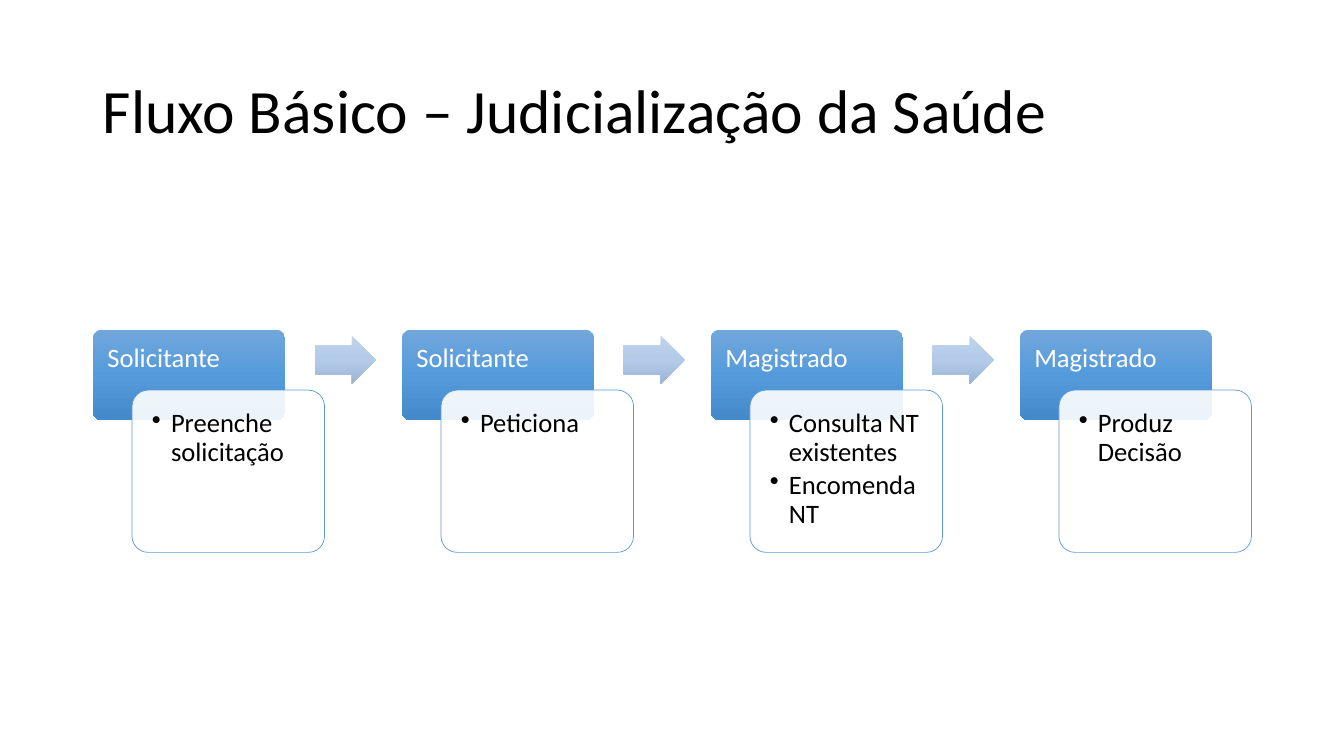
from copy import deepcopy

from lxml.etree import SubElement
from pptx import Presentation
from pptx.dml.color import RGBColor
from pptx.enum.shapes import MSO_SHAPE
from pptx.enum.text import MSO_ANCHOR, PP_ALIGN
from pptx.oxml.ns import qn
from pptx.util import Inches, Pt

COLORS = {"black": "000000", "white": "FFFFFF", "border": "5B9BD5"}
HEADER_GRADIENT = ["71A6DB", "559BDB", "448ACA"]
ARROW_GRADIENT = ["C0D2EB", "B3CBE9", "9BB4D3"]

STEPS = [
    ("Solicitante", ["Preenche solicitação"]),
    ("Solicitante", ["Peticiona"]),
    ("Magistrado", ["Consulta NT existentes", "Encomenda NT"]),
    ("Magistrado", ["Produz Decisão"]),
]
LEFT, TOP, PITCH = 0.92, 3.27, 3.065
CARD_WIDTH, HEADER_HEIGHT, BODY_HEIGHT = 1.91, 0.9, 1.61
BODY_SHIFT_X, BODY_SHIFT_Y = 0.39, 0.6
ARROW_SHIFT_X, ARROW_SHIFT_Y = 2.2, 0.06
ARROW_WIDTH, ARROW_HEIGHT = 0.61, 0.48


def write_text(shape, lines, size=19, color="black", anchor=MSO_ANCHOR.TOP,
               inset=None, space_after=0, bullet=False):
    frame = shape.text_frame
    frame.word_wrap = True
    frame.vertical_anchor = anchor
    if inset is not None:
        frame.margin_left = frame.margin_right = Inches(inset)
        frame.margin_top = frame.margin_bottom = Inches(inset)
    frame.text = "\n".join(lines)
    for paragraph in frame.paragraphs:
        paragraph.alignment = PP_ALIGN.LEFT
        paragraph.line_spacing = 0.9
        paragraph.space_after = Pt(space_after)
        font = paragraph.runs[0].font
        font.name = "Calibri"
        font.size = Pt(size)
        font.color.rgb = RGBColor.from_string(COLORS[color])
        if bullet:
            properties = paragraph._p.get_or_add_pPr()
            properties.set("marL", str(Inches(0.19)))
            properties.set("indent", str(-Inches(0.19)))
            SubElement(properties, qn("a:buChar"), char="•")


def add_block(kind, left, top, width, height, adjustments, gradient=None):
    shape = slide.shapes.add_shape(
        kind, Inches(left), Inches(top), Inches(width), Inches(height))
    shape.shadow.inherit = False
    for index, value in enumerate(adjustments):
        shape.adjustments[index] = value
    if gradient:
        shape.line.fill.background()
        shape.fill.gradient()
        shape.fill.gradient_angle = 270
        stop_list = shape._element.spPr.find(".//" + qn("a:gsLst"))
        stop_list.insert(1, deepcopy(stop_list[0]))
        for index, stop in enumerate(shape.fill.gradient_stops):
            stop.position = index / 2
            stop.color.rgb = RGBColor.from_string(gradient[index])
    return shape


presentation = Presentation()
presentation.slide_width = Inches(13.333)
presentation.slide_height = Inches(7.5)
slide = presentation.slides.add_slide(presentation.slide_layouts[5])

title = slide.shapes.title
title.left, title.top = Inches(0.92), Inches(0.4)
title.width, title.height = Inches(11.5), Inches(1.45)
write_text(title, ["Fluxo Básico – Judicialização da Saúde"],
           size=44, anchor=MSO_ANCHOR.MIDDLE)

for column, (role, tasks) in enumerate(STEPS):
    left = LEFT + column * PITCH

    header = add_block(MSO_SHAPE.ROUNDED_RECTANGLE, left, TOP,
                       CARD_WIDTH, HEADER_HEIGHT, [0.1], HEADER_GRADIENT)
    write_text(header, [role], color="white", inset=0.12)

    body = add_block(MSO_SHAPE.ROUNDED_RECTANGLE, left + BODY_SHIFT_X,
                     TOP + BODY_SHIFT_Y, CARD_WIDTH, BODY_HEIGHT, [0.1])
    body.fill.solid()
    body.fill.fore_color.rgb = RGBColor.from_string(COLORS["white"])
    fill_color = body._element.spPr.find(qn("a:solidFill"))[0]
    SubElement(fill_color, qn("a:alpha"), val="90000")
    body.line.color.rgb = RGBColor.from_string(COLORS["border"])
    body.line.width = Pt(0.5)
    write_text(body, tasks, inset=0.15, space_after=3, bullet=True)

    if column < len(STEPS) - 1:
        add_block(MSO_SHAPE.RIGHT_ARROW, left + ARROW_SHIFT_X, TOP + ARROW_SHIFT_Y,
                  ARROW_WIDTH, ARROW_HEIGHT, [0.6, 0.5], ARROW_GRADIENT)

presentation.save("out.pptx")
